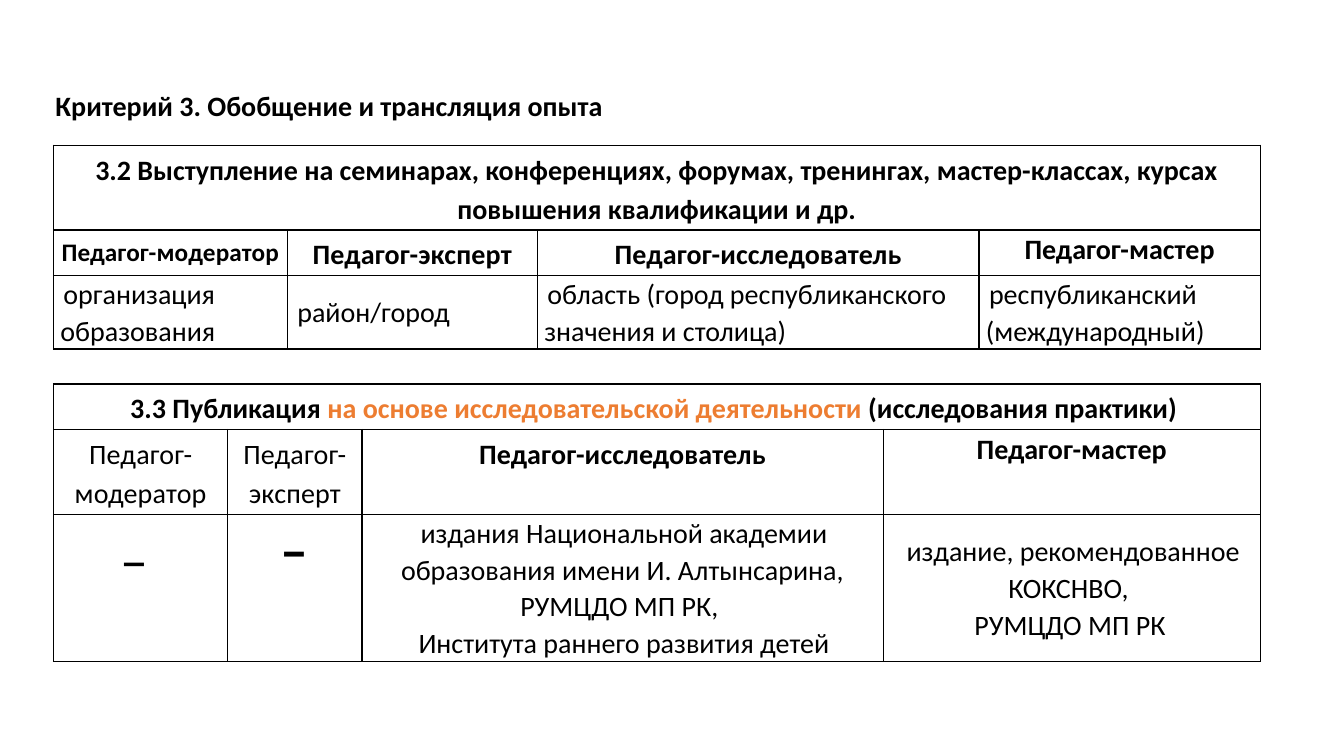
from lxml.etree import SubElement
from pptx import Presentation
from pptx.dml.color import RGBColor
from pptx.enum.text import MSO_ANCHOR as Anchor, PP_ALIGN as Align
from pptx.oxml.ns import qn
from pptx.util import Inches, Pt

COLORS = {"text": "000000", "accent": "ED7D31", "border": "000000"}
FONT = "Calibri"
TABLE_LEFT = 0.53

# Paragraph looks shared by both tables
HEADER = dict(bold=True, line_spacing=1.15)
TRACKED = dict(HEADER, tracking=10)
MASTER = dict(bold=True)
LEVEL = dict(line_spacing=1.07, indent=0.03)
LEVEL_LEFT = dict(LEVEL, align=Align.LEFT)


def write_text(text_frame, text, size=20, bold=False, align=Align.CENTER,
               line_spacing=1.0, indent=0, tracking=0, accent=None):
    """Fill a frame, one paragraph per line; the accent phrase gets its own colour."""
    for index, line in enumerate(text.split("\n")):
        paragraph = text_frame.paragraphs[0] if index == 0 else text_frame.add_paragraph()
        paragraph.alignment = align
        paragraph.line_spacing = line_spacing
        if indent:
            properties = paragraph._p.get_or_add_pPr()
            properties.set("marL", "0")
            properties.set("indent", str(Inches(indent)))
        before, phrase, after = line.partition(accent) if accent else (line, "", "")
        for part, color in ((before, "text"), (phrase, "accent"), (after, "text")):
            if not part:
                continue
            run = paragraph.add_run()
            run.text = part
            run.font.name = FONT
            run.font.size = Pt(size)
            run.font.bold = bold
            run.font.color.rgb = RGBColor.from_string(COLORS[color])
            if tracking:
                run._r.get_or_add_rPr().set("spc", str(tracking))


def style_cell(cell, is_level):
    """Set borders, padding and an empty fill."""
    properties = cell._tc.get_or_add_tcPr()
    for side in ("a:lnL", "a:lnR", "a:lnT", "a:lnB"):
        line = SubElement(properties, qn(side), w=str(Pt(1)))
        fill = SubElement(line, qn("a:solidFill"))
        SubElement(fill, qn("a:srgbClr"), val=COLORS["border"])
    cell.fill.background()
    cell.margin_left = cell.margin_right = Inches(0.07 if is_level else 0.05)
    cell.margin_top = cell.margin_bottom = Inches(0 if is_level else 0.03)
    cell.vertical_anchor = Anchor.MIDDLE if is_level else Anchor.TOP


def add_criteria_table(slide, top, widths, heights, heading, rows):
    """Add a table with a merged heading row above rows of (text, format) cells."""
    frame = slide.shapes.add_table(len(heights), len(widths), Inches(TABLE_LEFT), Inches(top),
                                   Inches(sum(widths)), Inches(sum(heights)))
    table = frame.table
    table.first_row = table.horz_banding = False
    for column, width in zip(table.columns, widths):
        column.width = Inches(width)
    for row, height in zip(table.rows, heights):
        row.height = Inches(height)

    # Heading across all columns
    for column in range(len(widths)):
        style_cell(table.cell(0, column), False)
    table.cell(0, 0).merge(table.cell(0, len(widths) - 1))
    text, look = heading
    write_text(table.cell(0, 0).text_frame, text, **look)

    # Teacher categories and their levels
    for row_index, row in enumerate(rows, start=1):
        for column, (text, look) in enumerate(row):
            cell = table.cell(row_index, column)
            style_cell(cell, "indent" in look)
            write_text(cell.text_frame, text, **look)


def add_title(slide, text):
    title = slide.shapes.title
    title.left, title.top = Inches(0.45), Inches(0.83)
    title.width, title.height = Inches(5.67), Inches(0.44)
    title.text_frame.word_wrap = False
    title.text_frame.vertical_anchor = Anchor.TOP
    write_text(title.text_frame, text, bold=True, align=Align.LEFT)


def main():
    presentation = Presentation()
    presentation.slide_width, presentation.slide_height = Inches(13.33), Inches(7.5)
    slide = presentation.slides.add_slide(presentation.slide_layouts[5])
    add_title(slide, "Критерий 3. Обобщение и трансляция опыта")

    # 3.2 Talks
    add_criteria_table(
        slide, 1.44, [2.32, 2.48, 4.38, 2.79], [0.82, 0.45, 0.71],
        ("3.2 Выступление на семинарах, конференциях, форумах, тренингах, "
         "мастер-классах, курсах повышения квалификации и др.", HEADER),
        [[("Педагог-модератор", dict(TRACKED, size=18)),
          ("Педагог-эксперт", TRACKED),
          ("Педагог-исследователь", TRACKED),
          ("Педагог-мастер", MASTER)],
         [("организация образования", LEVEL_LEFT),
          ("район/город", LEVEL_LEFT),
          ("область (город республиканского значения и столица)", LEVEL_LEFT),
          ("республиканский (международный)", LEVEL_LEFT)]])

    # 3.3 Publications
    add_criteria_table(
        slide, 3.81, [1.73, 1.33, 5.17, 3.74], [0.45, 0.82, 1.43],
        ("3.3 Публикация на основе исследовательской деятельности (исследования практики) ",
         dict(HEADER, accent="на основе исследовательской деятельности")),
        [[("Педагог-\nмодератор", dict(TRACKED, bold=False)),
          ("Педагог-эксперт", dict(TRACKED, bold=False)),
          ("Педагог-исследователь", TRACKED),
          ("Педагог-мастер", MASTER)],
         [("– ", dict(HEADER, size=40, bold=False)),
          ("–", dict(MASTER, size=40)),
          ("издания Национальной академии образования имени И. Алтынсарина, "
           "РУМЦДО МП РК, \nИнститута раннего развития детей", LEVEL),
          ("издание, рекомендованное КОКСНВО, \nРУМЦДО МП РК ", LEVEL)]])

    presentation.save("out.pptx")


if __name__ == "__main__":
    main()
